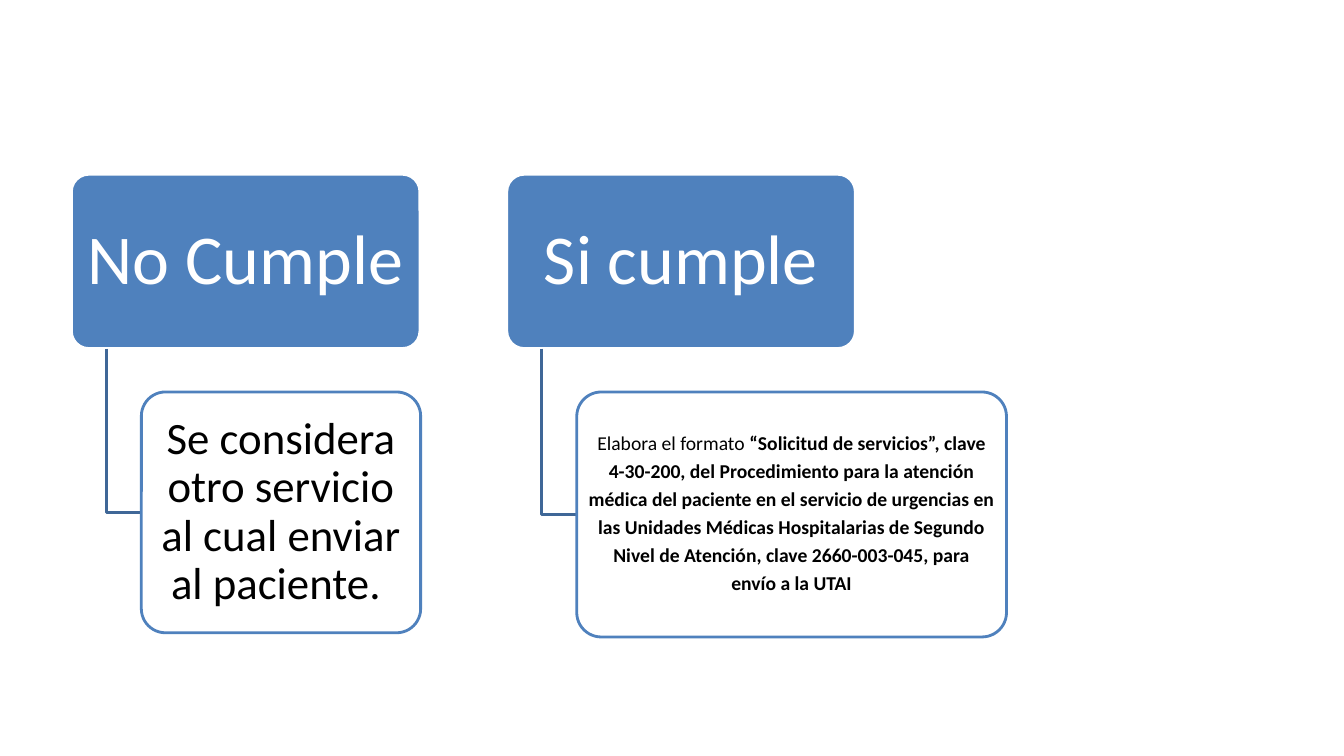
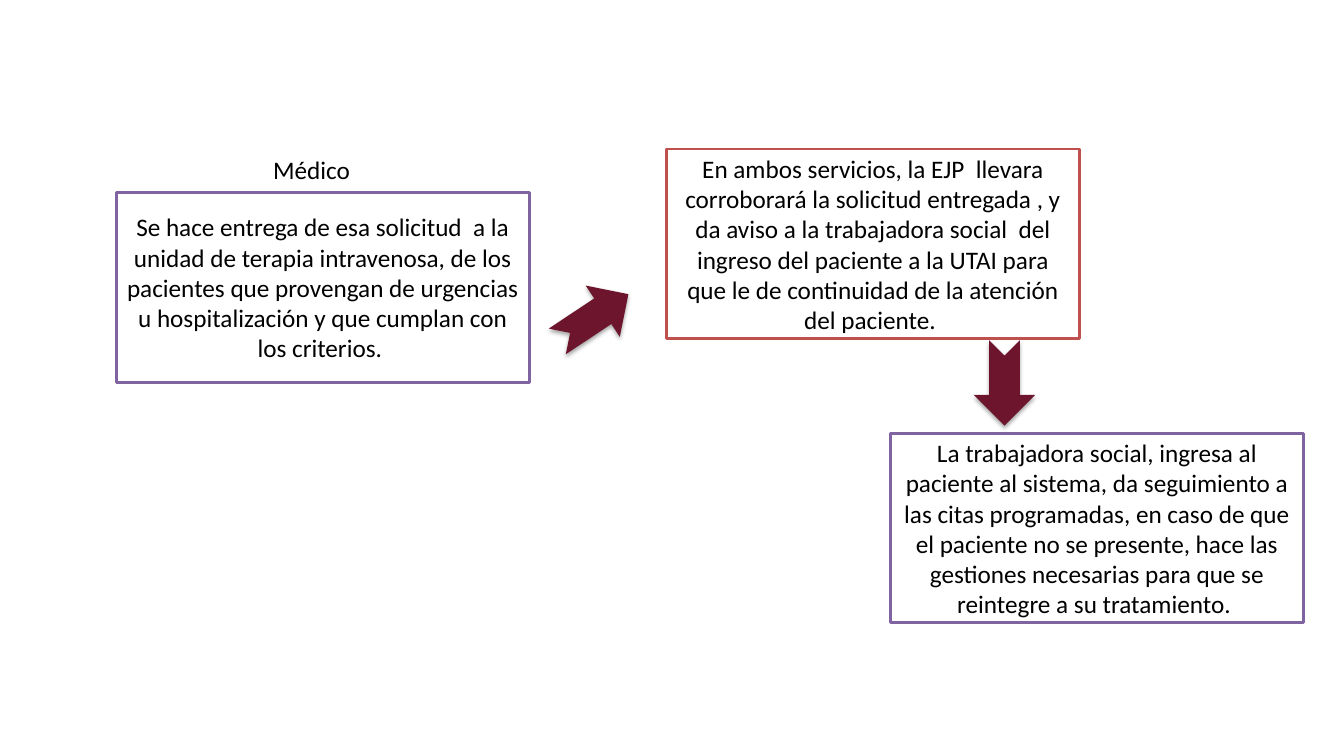
from lxml import etree
from pptx import Presentation
from pptx.dml.color import RGBColor
from pptx.enum.shapes import MSO_SHAPE as Kind
from pptx.enum.text import MSO_ANCHOR as Anchor, PP_ALIGN as Align
from pptx.oxml import parse_xml
from pptx.oxml.ns import nsdecls, qn
from pptx.util import Pt

HEX = {"blue": "4F81BD", "stem": "3F6797", "white": "FFFFFF", "black": "000000",
       "violet": "8064A2", "red": "C0504D", "wine": "6E152E"}
FONT = "Calibri"
HEAD = (249, 124.5)   # heading width and height
STEP = (50, 31)       # indent and gap from heading to detail
CARD = (295, 135.5)   # width and height of a step box

REQUEST = [
    "Elabora el formato “Solicitud de servicios”, clave",
    "4-30-200, del Procedimiento para la atención",
    "médica del paciente en el servicio de urgencias en",
    "las Unidades Médicas Hospitalarias de Segundo",
    "Nivel de Atención, clave 2660-003-045, para",
    "envío a la UTAI",
]
PLAIN = "Elabora el formato "
CARDS = [
    (83, 137.5, "violet",
     "Se hace entrega de esa solicitud  a la unidad de terapia intravenosa, de los "
     "pacientes que provengan de urgencias u hospitalización y que cumplan con los criterios. "),
    (476, 106.5, "red",
     "En ambos servicios, la EJP  llevara corroborará la solicitud entregada , y da aviso "
     "a la trabajadora social  del ingreso del paciente a la UTAI para que le de continuidad "
     "de la atención del paciente. "),
    (636, 309.5, "violet",
     "La trabajadora social, ingresa al paciente al sistema, da seguimiento a las citas "
     "programadas, en caso de que el paciente no se presente, hace las gestiones necesarias "
     "para que se reintegre a su tratamiento. "),
]
ARROWS = [(393, 205, 326.4), (687, 251.5, 90)]


def color(name):
    return RGBColor.from_string(HEX[name])


def add_box(slide, kind, box, fill, line=None):
    shape = slide.shapes.add_shape(kind, *map(Pt, box))
    shape.shadow.inherit = False
    shape.fill.solid()
    shape.fill.fore_color.rgb = color(fill)
    if line:
        shape.line.color.rgb = color(line)
        shape.line.width = Pt(2)
    else:
        shape.line.fill.background()
    return shape


def style(par, size, ink="black"):
    for run in par.runs:
        run.font.name = FONT
        run.font.size = Pt(size)
        run.font.color.rgb = color(ink)


def write(shape, text, size, ink="black", pads=(7.2, 3.6), tight=False):
    """Set centred text; tight uses closer lines and spaced paragraphs."""
    frame = shape.text_frame
    frame.word_wrap = True
    frame.vertical_anchor = Anchor.MIDDLE
    frame.margin_left = frame.margin_right = Pt(pads[0])
    frame.margin_top = frame.margin_bottom = Pt(pads[1])
    frame.text = text
    for par in frame.paragraphs:
        par.alignment = Align.CENTER
        if tight:
            par.line_spacing = 0.9
            par.space_after = Pt(round(size * 0.35, 1))
        style(par, size, ink)
    return frame


def add_stem(slide, left, top, wide, high):
    pen = slide.shapes.build_freeform(Pt(left), Pt(top))
    pen.add_line_segments([(Pt(left), Pt(top + high)),
                           (Pt(left + wide), Pt(top + high))], close=False)
    stem = pen.convert_to_shape()
    stem.shadow.inherit = False
    stem.fill.background()
    stem.line.color.rgb = color("stem")
    stem.line.width = Pt(2)


def add_branch(slide, left, top, title, text, area, size, pads):
    """Place a heading with a detail box hung below it; return the detail text."""
    wide, high = area
    base = top + HEAD[1]
    head = add_box(slide, Kind.ROUNDED_RECTANGLE, (left, top, *HEAD), "blue", "white")
    write(head, title, 50, "white", (7.2, 5), tight=True)
    add_stem(slide, left + STEP[0] / 2, base, STEP[0] / 2, STEP[1] + high / 2)
    note = add_box(slide, Kind.ROUNDED_RECTANGLE,
                   (left + STEP[0], base + STEP[1], wide, high), "white", "blue")
    for shape in (head, note):
        shape.adjustments[0] = 0.1
    return write(note, text, size, pads=pads, tight=True)


def add_arrow(slide, left, top, turn):
    arrow = add_box(slide, Kind.NOTCHED_RIGHT_ARROW, (left, top, 61, 44), "wine")
    arrow.rotation = turn
    glow = arrow.element.spPr.find(qn("a:effectLst"))
    glow.append(parse_xml(
        f'<a:outerShdw {nsdecls("a")} blurRad="{Pt(3.1)}" dist="{Pt(1.8)}" '
        'dir="5400000" rotWithShape="0"/>'))
    tint = etree.SubElement(glow[0], qn("a:srgbClr"), val=HEX["black"])
    etree.SubElement(tint, qn("a:alpha"), val="35000")


def fill_choice(slide):
    add_branch(slide, 51, 124.5, "No Cumple",
               "Se considera otro servicio al cual enviar al paciente. ",
               (199.5, 172), 32, (5, 3))
    frame = add_branch(slide, 362, 124.5, "Si cumple", "\n".join(REQUEST),
                       (307, 175), 14, (2, 1.5))
    first = frame.paragraphs[0]
    first.runs[0].text = PLAIN
    first.add_run().text = REQUEST[0][len(PLAIN):]
    style(first, 14)
    for par in frame.paragraphs:
        for run in par.runs:
            run.font.bold = run.text != PLAIN


def fill_steps(slide):
    for left, top, line, text in CARDS:
        card = add_box(slide, Kind.RECTANGLE, (left, top, *CARD), "white", line)
        write(card, text, 18)
    label = slide.shapes.add_textbox(Pt(188), Pt(106.5), Pt(181), Pt(29))
    label.text_frame.word_wrap = True
    label.text_frame.text = "Médico"
    style(label.text_frame.paragraphs[0], 18)
    for arrow in ARROWS:
        add_arrow(slide, *arrow)


def main():
    deck = Presentation()
    deck.slide_width, deck.slide_height = Pt(960), Pt(540)
    for fill in (fill_choice, fill_steps):
        fill(deck.slides.add_slide(deck.slide_layouts[6]))
    deck.save("out.pptx")


if __name__ == "__main__":
    main()
